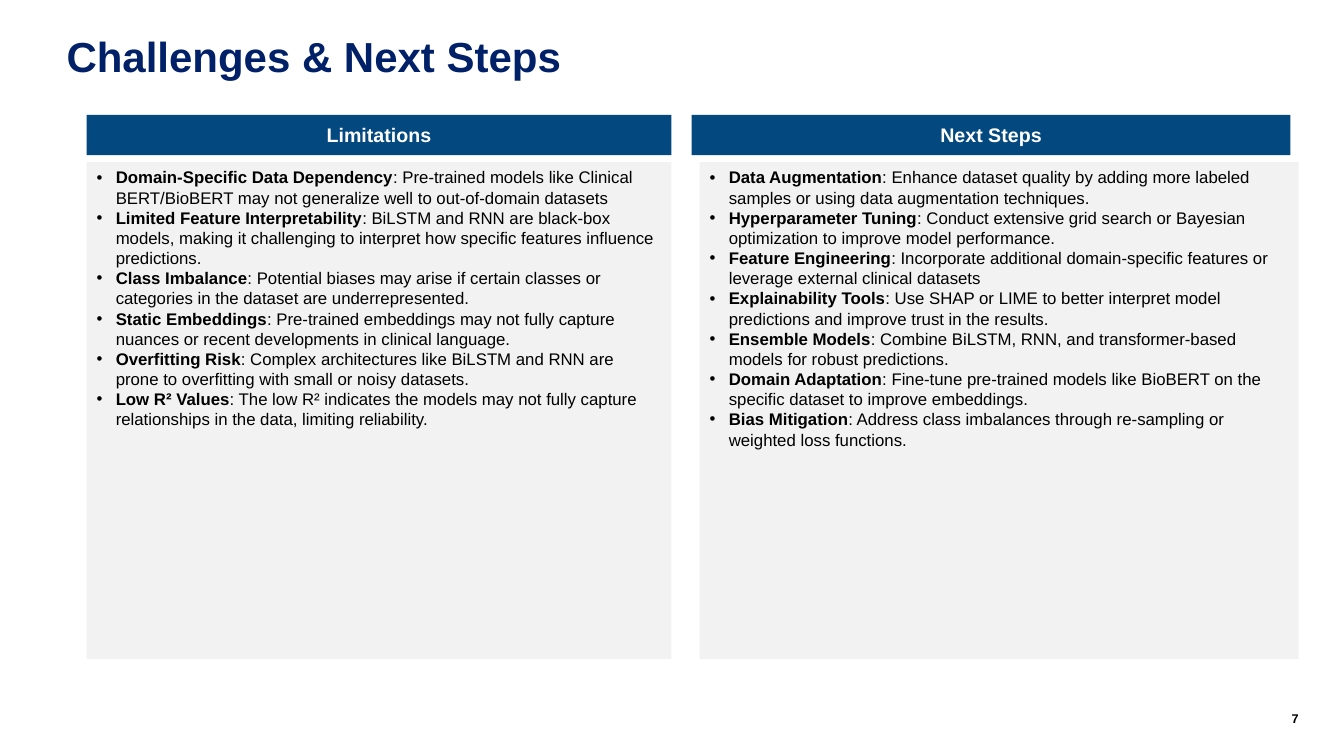
"""Build the Challenges & Next Steps slide with two bulleted columns."""
from lxml import etree
from pptx import Presentation
from pptx import util as u
from pptx.dml.color import RGBColor
from pptx.enum import shapes, text
from pptx.oxml.ns import qn

TITLE = "Challenges & Next Steps"
PAGE = "7"
COLUMNS = [
    {"head": "Limitations", "head_left": 0.86, "body_left": 0.86, "width": 5.8, "points": [
        ("Domain-Specific Data Dependency", "Pre-trained models like Clinical BERT/BioBERT may not generalize well to out-of-domain datasets"),
        ("Limited Feature Interpretability", "BiLSTM and RNN are black-box models, making it challenging to interpret how specific features influence predictions."),
        ("Class Imbalance", "Potential biases may arise if certain classes or categories in the dataset are underrepresented."),
        ("Static Embeddings", "Pre-trained embeddings may not fully capture nuances or recent developments in clinical language."),
        ("Overfitting Risk", "Complex architectures like BiLSTM and RNN are prone to overfitting with small or noisy datasets."),
        ("Low R² Values", "The low R² indicates the models may not fully capture relationships in the data, limiting reliability."),
    ]},
    {"head": "Next Steps", "head_left": 6.86, "body_left": 6.94, "width": 5.94, "points": [
        ("Data Augmentation", "Enhance dataset quality by adding more labeled samples or using data augmentation techniques."),
        ("Hyperparameter Tuning", "Conduct extensive grid search or Bayesian optimization to improve model performance."),
        ("Feature Engineering", "Incorporate additional domain-specific features or leverage external clinical datasets"),
        ("Explainability Tools", "Use SHAP or LIME to better interpret model predictions and improve trust in the results."),
        ("Ensemble Models", "Combine BiLSTM, RNN, and transformer-based models for robust predictions."),
        ("Domain Adaptation", "Fine-tune pre-trained models like BioBERT on the specific dataset to improve embeddings."),
        ("Bias Mitigation", "Address class imbalances through re-sampling or weighted loss functions."),
    ]},
]
NAVY, BLUE, GRAY, BLACK, WHITE = "002068", "03487F", "F2F2F2", "000000", "FFFFFF"
HEAD_TOP, HEAD_HEIGHT = 1.14, 0.4
BODY_TOP, BODY_HEIGHT = 1.61, 4.93
INDENT = 0.19


def color(fmt, value):
    fmt.rgb = RGBColor.from_string(value)


def add_run(p, words, size, value, bold=True):
    r = p.add_run()
    r.text = words
    r.font.name, r.font.size, r.font.bold = "Arial", u.Pt(size), bold
    color(r.font.color, value)


def add_label(s, box, words, size, value, align):
    tf = s.shapes.add_textbox(*map(u.Inches, box)).text_frame
    tf.word_wrap = True
    tf.margin_left = tf.margin_right = tf.margin_top = tf.margin_bottom = 0
    p = tf.paragraphs[0]
    p.alignment = align
    add_run(p, words, size, value)
    return p


def add_panel(s, box, fill, anchor):
    sp = s.shapes.add_shape(shapes.MSO_SHAPE.RECTANGLE, *map(u.Inches, box))
    sp.shadow.inherit = False
    sp.fill.solid()
    color(sp.fill.fore_color, fill)
    sp.line.fill.background()
    tf = sp.text_frame
    tf.word_wrap = True
    tf.vertical_anchor = anchor
    return tf


def add_bullet(p):
    p.alignment = text.PP_ALIGN.LEFT
    pPr = p._p.get_or_add_pPr()
    pPr.set("marL", str(u.Inches(INDENT)))
    pPr.set("indent", str(-u.Inches(INDENT)))
    etree.SubElement(pPr, qn("a:buFont")).set("typeface", "Arial")
    etree.SubElement(pPr, qn("a:buChar")).set("char", "•")


def add_column(s, col):
    head = (col["head_left"], HEAD_TOP, col["width"], HEAD_HEIGHT)
    p = add_panel(s, head, BLUE, text.MSO_ANCHOR.MIDDLE).paragraphs[0]
    p.alignment = text.PP_ALIGN.CENTER
    add_run(p, col["head"], 14, WHITE)

    body = (col["body_left"], BODY_TOP, col["width"], BODY_HEIGHT)
    tf = add_panel(s, body, GRAY, text.MSO_ANCHOR.TOP)
    for i, (term, detail) in enumerate(col["points"]):
        p = tf.add_paragraph() if i else tf.paragraphs[0]
        add_bullet(p)
        add_run(p, term, 12, BLACK)
        add_run(p, ": " + detail, 12, BLACK, False)


def main():
    prs = Presentation()
    prs.slide_width, prs.slide_height = u.Inches(13.33), u.Inches(7.5)
    s = prs.slides.add_slide(prs.slide_layouts[6])
    title = add_label(s, (0.66, 0.34, 9.62, 0.51), TITLE, 30, NAVY, text.PP_ALIGN.LEFT)
    title.line_spacing = 0.95
    add_label(s, (12.37, 7.05, 0.51, 0.2), PAGE, 9, BLACK, text.PP_ALIGN.RIGHT)
    for col in COLUMNS:
        add_column(s, col)
    prs.save("out.pptx")


if __name__ == "__main__":
    main()
